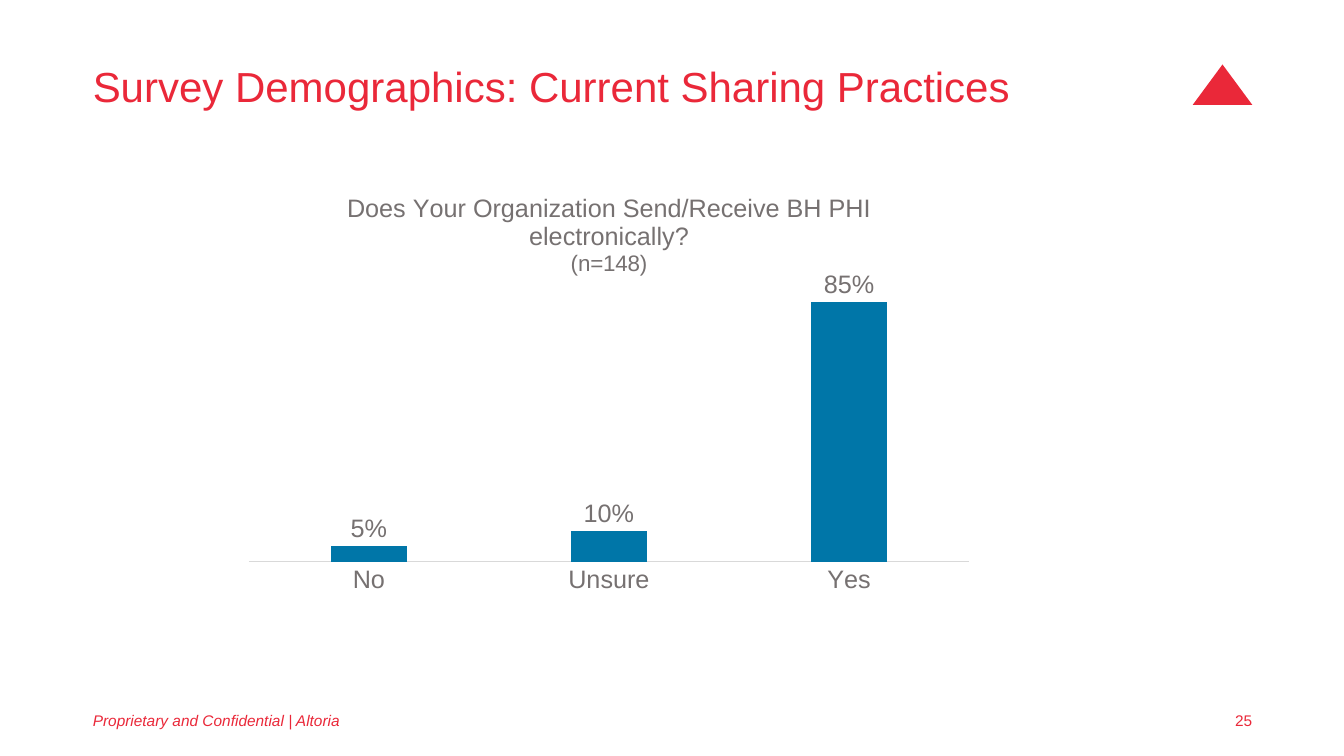
from lxml import etree
from pptx import Presentation
from pptx import util as u
from pptx.chart import data
from pptx.dml import color
from pptx.enum import chart as charts, shapes, text
from pptx.oxml import ns

RED, BLUE, GREY, PALE = "EA2839", "0076A8", "767171", "D9D9D9"


def rgb(value):
    return color.RGBColor.from_string(value)


def format_font(font, size, fill, italic=False):
    font.name, font.size = "Arial", u.Pt(size)
    font.bold, font.italic = False, italic
    font.color.rgb = rgb(fill)


def set_plot_layout(chart, x, y, w, h):
    """Place the inner plot area, in fractions of the chart frame."""
    plot_area = chart.plots[0]._element.getparent()
    for old in plot_area.findall(ns.qn("c:layout")):
        plot_area.remove(old)
    layout = etree.Element(ns.qn("c:layout"))
    manual = etree.SubElement(layout, ns.qn("c:manualLayout"))
    settings = {"layoutTarget": "inner", "xMode": "edge", "yMode": "edge",
                "x": x, "y": y, "w": w, "h": h}
    for name, value in settings.items():
        etree.SubElement(manual, ns.qn(f"c:{name}")).set("val", str(value))
    plot_area.insert(0, layout)


class SlideBuilder:
    def __init__(self, slide):
        self.slide = slide

    def text(self, words, left, top, width, height, size=11, fill=RED,
             italic=False, align=text.PP_ALIGN.LEFT, spacing=1.0):
        shape = self.slide.shapes.add_textbox(*map(u.Inches, (left, top, width, height)))
        frame = shape.text_frame
        frame.word_wrap = True
        frame.vertical_anchor = text.MSO_ANCHOR.MIDDLE
        frame.margin_left = frame.margin_right = 0
        frame.margin_top = frame.margin_bottom = 0
        paragraph = frame.paragraphs[0]
        paragraph.alignment, paragraph.line_spacing = align, spacing
        run = paragraph.add_run()
        run.text = words
        format_font(run.font, size, fill, italic)

    def triangle(self, left, top, width, height, fill):
        shape = self.slide.shapes.add_shape(
            shapes.MSO_SHAPE.ISOSCELES_TRIANGLE,
            *map(u.Inches, (left, top, width, height)))
        shape.shadow.inherit = False
        shape.fill.solid()
        shape.fill.fore_color.rgb = rgb(fill)
        shape.line.fill.background()

    def column_chart(self, title_lines, values, left, top, width, height):
        """Add a column chart; title_lines holds (text, size) pairs."""
        chart_data = data.CategoryChartData(number_format="0%")
        chart_data.categories = list(values)
        chart_data.add_series("Series 1", list(values.values()))
        chart = self.slide.shapes.add_chart(
            charts.XL_CHART_TYPE.COLUMN_CLUSTERED,
            *map(u.Inches, (left, top, width, height)), chart_data).chart
        format_font(chart.font, 18, GREY)
        chart.has_legend = False

        frame = chart.chart_title.text_frame
        for index, (words, size) in enumerate(title_lines):
            paragraph = frame.add_paragraph() if index else frame.paragraphs[0]
            run = paragraph.add_run()
            run.text = words
            format_font(run.font, size, GREY)
        chart.chart_title.include_in_layout = False

        category_axis, value_axis = chart.category_axis, chart.value_axis
        category_axis.major_tick_mark = charts.XL_TICK_MARK.NONE
        category_axis.format.line.color.rgb = rgb(PALE)
        category_axis.format.line.width = u.Pt(0.75)
        format_font(category_axis.tick_labels.font, 18, GREY)
        value_axis.minimum_scale, value_axis.maximum_scale = 0, 0.9
        value_axis.has_major_gridlines = False
        value_axis.visible = False

        plot = chart.plots[0]
        plot.gap_width, plot.overlap, plot.vary_by_categories = 219, -27, False
        fill = plot.series[0].format.fill
        fill.solid()
        fill.fore_color.rgb = rgb(BLUE)
        labels = plot.series[0].data_labels
        labels.show_value = True
        labels.number_format, labels.number_format_is_linked = "0%", False
        labels.position = charts.XL_LABEL_POSITION.OUTSIDE_END
        format_font(labels.font, 18, GREY)
        set_plot_layout(chart, 0.02, 0.26, 0.96, 0.64)


def main():
    presentation = Presentation()
    presentation.slide_width = u.Inches(13.33)
    presentation.slide_height = u.Inches(7.5)
    builder = SlideBuilder(presentation.slides.add_slide(presentation.slide_layouts[6]))

    builder.triangle(11.83, 0.64, 0.59, 0.4, RED)
    builder.column_chart(
        [("Does Your Organization Send/Receive BH PHI electronically?", 18),
         ("(n=148)", 16)],
        {"No": 0.05, "Unsure": 0.1, "Yes": 0.85},
        2.32, 1.74, 7.44, 4.26)
    builder.text("Survey Demographics: Current Sharing Practices",
                 0.92, 0.16, 10.25, 1.45, size=30, spacing=0.85)
    builder.text("25", 10.67, 6.95, 1.75, 0.4, align=text.PP_ALIGN.RIGHT)
    builder.text("Proprietary and Confidential | Altoria",
                 0.92, 6.95, 3.75, 0.4, italic=True)
    presentation.save("out.pptx")


if __name__ == "__main__":
    main()
